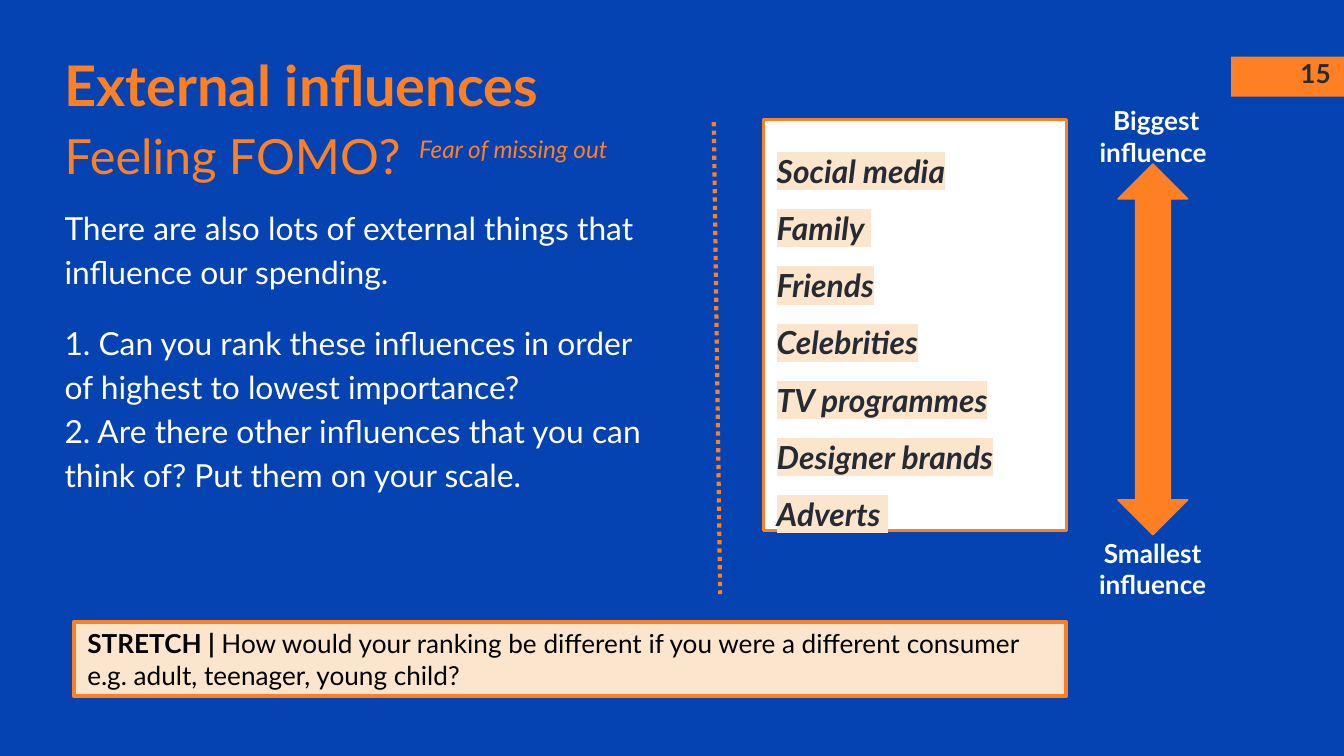
"""Build the slide on external influences and spending."""
from lxml.etree import SubElement
from pptx import Presentation
from pptx.dml.color import RGBColor
from pptx.enum.dml import MSO_LINE
from pptx.enum.shapes import MSO_CONNECTOR, MSO_SHAPE
from pptx.enum.text import MSO_ANCHOR, PP_ALIGN
from pptx.oxml.ns import qn
from pptx.util import Cm, Pt

HUES = {"blue": "0543B3", "orange": "FF8022", "cream": "FCE5CD",
        "white": "FFFFFF", "ink": "262A33", "black": "000000"}
FONT = "Lato"
PAD = 0.25

HEAD = [[("External influences", {"size": 30, "bold": True})],
        [("Feeling FOMO?", {"size": 26})]]
BODY = ["There are also lots of external things that influence our spending.",
        "1. Can you rank these influences in order of highest to lowest importance?",
        "2. Are there other influences that you can think of? Put them on your scale."]
RANKS = ["Social media", "Family ", "Friends", "Celebrities",
         "TV programmes", "Designer brands", "Adverts "]
TASK = [[("STRETCH | ", {"bold": True}),
         ("How would your ranking be different if you were a different consumer "
          "e.g. adult, teenager, young child?", {})]]
ENDS = [(["Biggest", "influence "], (20.42, 1.73, 2.87, 1.7)),
        (["Smallest influence"], (20.35, 9.91, 2.87, 1.7))]
NOTE = "Fear of missing out"
PAGE = "15"


def tint(name):
    return RGBColor.from_string(HUES[name])


def place(shape, box):
    shape.left, shape.top, shape.width, shape.height = map(Cm, box)


def plain(lines, **style):
    return [[(line, style)] for line in lines]


def add_run(para, text, hue, size, bold=False, italic=False, mark=None):
    run = para.add_run()
    run.text = text
    font = run.font
    font.size, font.bold, font.italic = Pt(size), bold, italic
    font.color.rgb = tint(hue)
    font.name = FONT
    if mark:
        props = run._r.get_or_add_rPr()
        glow = SubElement(props, qn("a:highlight"))
        SubElement(glow, qn("a:srgbClr"), val=HUES[mark])
        props.find(qn("a:solidFill")).addnext(glow)


def write(shape, paras, hue, size=14, align=PP_ALIGN.LEFT, space=1.0,
          pad=PAD, anchor=MSO_ANCHOR.TOP):
    frame = shape.text_frame
    frame.word_wrap = True
    frame.vertical_anchor = anchor
    frame.margin_left = frame.margin_right = Cm(pad)
    frame.margin_top = frame.margin_bottom = Cm(pad)
    for i, runs in enumerate(paras):
        para = frame.add_paragraph() if i else frame.paragraphs[0]
        para.alignment, para.line_spacing = align, space
        para.space_before = para.space_after = Pt(0)
        for text, style in runs:
            add_run(para, text, hue, **{"size": size, **style})


def add_text(slide, box, paras, hue, **opts):
    shape = slide.shapes.add_textbox(*map(Cm, box))
    write(shape, paras, hue, **opts)
    return shape


def add_block(slide, kind, box, fill, width=0):
    shape = slide.shapes.add_shape(kind, *map(Cm, box))
    shape.shadow.inherit = False
    shape.fill.solid()
    shape.fill.fore_color.rgb = tint(fill)
    if width:
        shape.line.color.rgb = tint("orange")
        shape.line.width = Pt(width)
    else:
        shape.line.fill.background()
    return shape


def add_rule(slide, start, end):
    rule = slide.shapes.add_connector(MSO_CONNECTOR.STRAIGHT, *map(Cm, start + end))
    rule.line.color.rgb = tint("orange")
    rule.line.width = Pt(2.25)
    rule.line.dash_style = MSO_LINE.ROUND_DOT
    SubElement(rule._element.spPr, qn("a:effectLst"))


def main():
    deck = Presentation()
    deck.slide_width, deck.slide_height = Cm(25.4), Cm(14.29)
    slide = deck.slides.add_slide(deck.slide_layouts[5])
    slide.background.fill.solid()
    slide.background.fill.fore_color.rgb = tint("blue")
    rect = MSO_SHAPE.RECTANGLE

    title = slide.shapes.title
    place(title, (1.22, 0.76, 17.96, 1.52))
    write(title, HEAD, "orange", space=1.15, pad=0)
    add_block(slide, rect, (23.27, 1.07, 2.13, 0.76), "orange")

    body = add_text(slide, (1.22, 3.84, 11.28, 4.78), plain(BODY), "white",
                    size=17, space=1.15, pad=0)
    body.text_frame.paragraphs[1].space_before = Pt(15)

    card = add_block(slide, rect, (14.43, 2.26, 5.72, 7.77), "white", 1.5)
    write(card, plain(RANKS, bold=True, italic=True, mark="cream"), "ink",
          size=17, space=1.5)

    add_block(slide, MSO_SHAPE.UP_DOWN_ARROW, (21.13, 3.1, 1.32, 7.01), "orange", 0.75)
    add_rule(slide, (13.49, 2.31), (13.61, 11.23))
    for lines, box in ENDS:
        add_text(slide, box, plain(lines, bold=True), "white", align=PP_ALIGN.CENTER)

    strip = add_block(slide, rect, (1.4, 11.76, 18.75, 1.4), "cream", 2.25)
    write(strip, TASK, "black", anchor=MSO_ANCHOR.MIDDLE)
    add_text(slide, (7.67, 2.29, 6.17, 1.07), plain([NOTE], italic=True), "orange", size=13)
    add_text(slide, (23.88, 0.84, 1.52, 1.09), plain([PAGE], bold=True), "ink",
             align=PP_ALIGN.RIGHT)
    deck.save("out.pptx")


if __name__ == "__main__":
    main()
